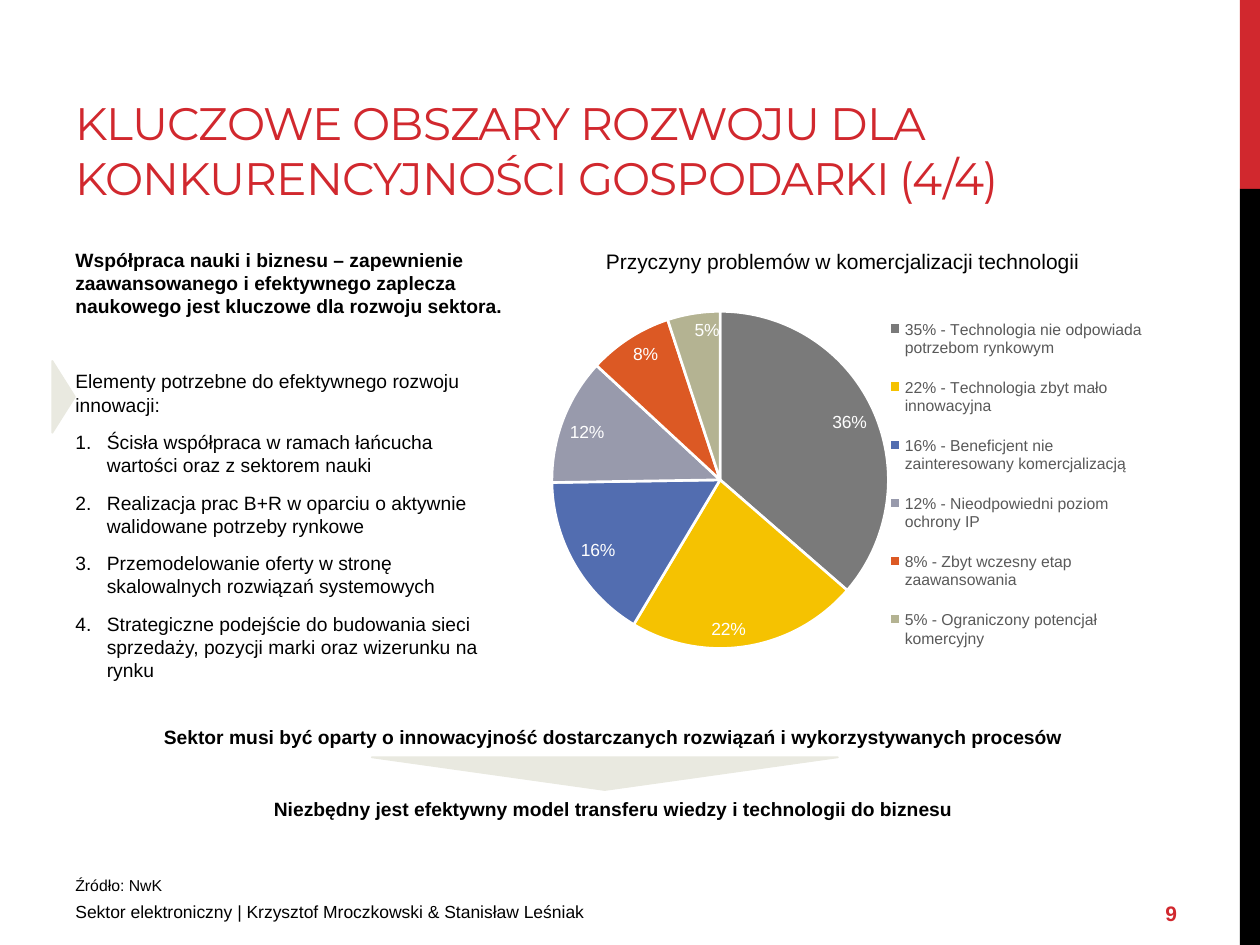
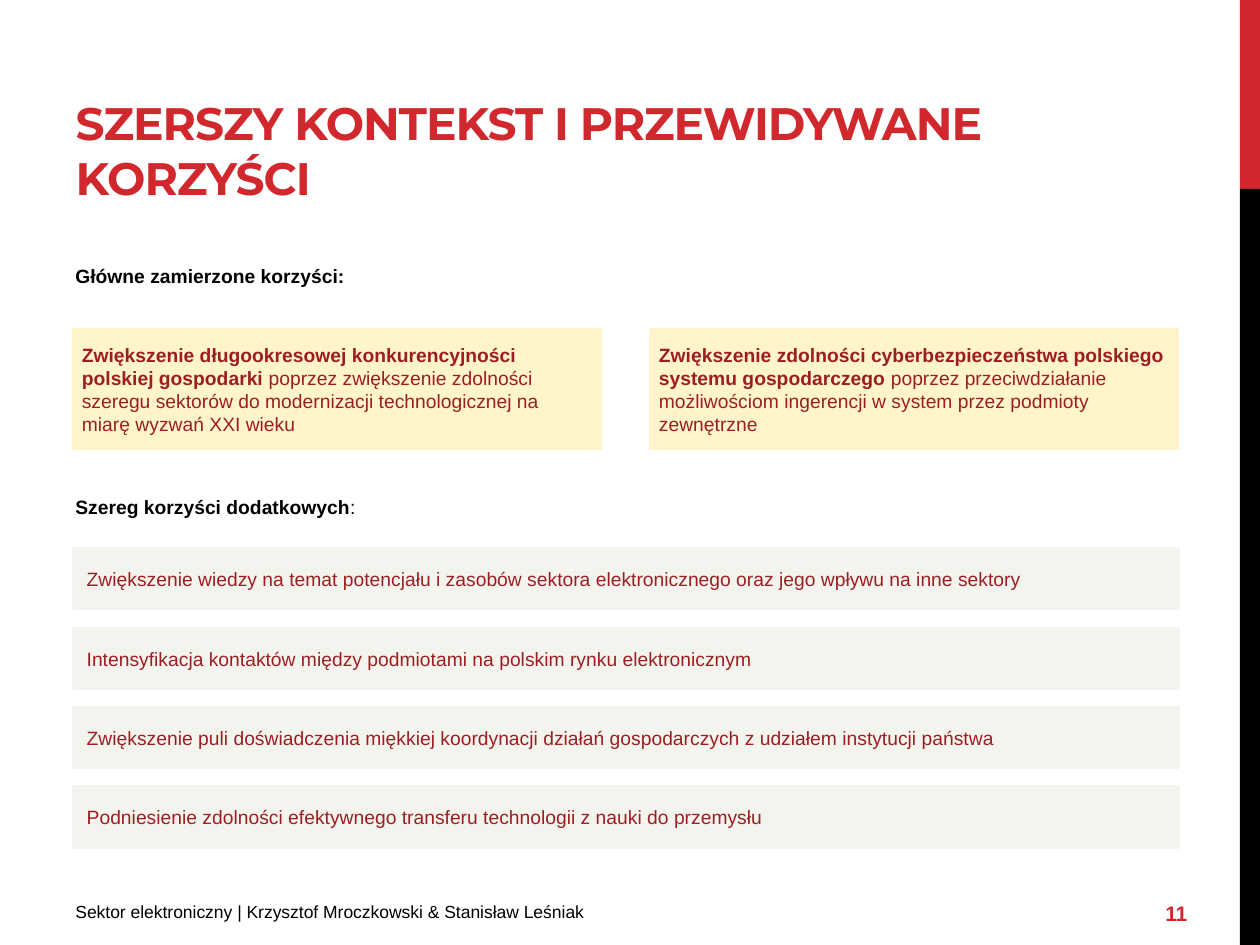
from lxml import etree
from pptx import Presentation
from pptx.chart.data import CategoryChartData
from pptx.dml.color import RGBColor
from pptx.enum.chart import XL_CHART_TYPE as ChartType
from pptx.enum.chart import XL_LABEL_POSITION as LabelPosition
from pptx.enum.chart import XL_LEGEND_POSITION as LegendPosition
from pptx.enum.shapes import MSO_SHAPE as Preset
from pptx.enum.text import MSO_ANCHOR as Anchor
from pptx.enum.text import MSO_AUTO_SIZE as AutoSize
from pptx.enum.text import PP_ALIGN as Align
from pptx.oxml.ns import qn
from pptx.util import Inches, Pt

RED = RGBColor(0xD1, 0x28, 0x2E)
DARK_RED = RGBColor(0x9D, 0x1E, 0x22)
BLACK = RGBColor(0, 0, 0)
WHITE = RGBColor(0xFF, 0xFF, 0xFF)
LEGEND_GREY = RGBColor(0x59, 0x59, 0x59)
ARROW_GREY = RGBColor(0xE9, 0xE9, 0xE0)
CARD_YELLOW = RGBColor(0xFF, 0xF4, 0xCA)
BAR_GREY = RGBColor(0xF4, 0xF4, 0xEF)

BODY = {"name": "Arial", "size": Pt(11), "bold": False}
BOLD = {**BODY, "bold": True}
TITLE = {"name": "Montserrat", "size": Pt(26), "bold": False}
FOOTER = {**BODY, "size": Pt(10)}
PAGE = {**BOLD, "size": Pt(12)}
CHART_TITLE = {**BODY, "size": Pt(12)}
SMALL = {**BODY, "size": Pt(9)}

FOOTER_TEXT = "Sektor elektroniczny | Krzysztof Mroczkowski & Stanisław Leśniak"
SIDE_BANDS = [(0, 1.5, RED), (1.5, 6, BLACK)]

AREAS_TITLE = "KLUCZOWE OBSZARY ROZWOJU DLA KONKURENCYJNOŚCI GOSPODARKI (4/4)"
COOPERATION = (
    "Współpraca nauki i biznesu – zapewnienie zaawansowanego i efektywnego "
    "zaplecza naukowego jest kluczowe dla rozwoju sektora."
)
ELEMENTS_INTRO = "Elementy potrzebne do efektywnego rozwoju innowacji:"
ELEMENTS = [
    "Ścisła współpraca w ramach łańcucha wartości oraz z sektorem nauki",
    "Realizacja prac B+R w oparciu o aktywnie walidowane potrzeby rynkowe",
    "Przemodelowanie oferty w stronę skalowalnych rozwiązań systemowych",
    "Strategiczne podejście do budowania sieci sprzedaży, pozycji marki oraz wizerunku na rynku",
]
CONCLUSIONS = [
    (5.71, "Sektor musi być oparty o innowacyjność dostarczanych rozwiązań i wykorzystywanych procesów"),
    (6.28, "Niezbędny jest efektywny model transferu wiedzy i technologii do biznesu"),
]
ARROWS = [(0.22, 3.06, 0.57, 0.18, 90), (2.95, 6.01, 3.7, 0.26, 180)]
PROBLEMS_TITLE = "Przyczyny problemów w komercjalizacji technologii"
PROBLEMS = [
    ("35% - Technologia nie odpowiada potrzebom rynkowym", 36, RGBColor(0x7A, 0x7A, 0x7A)),
    ("22% - Technologia zbyt mało innowacyjna", 22, RGBColor(0xF5, 0xC2, 0x01)),
    ("16% - Beneficjent nie zainteresowany komercjalizacją", 16, RGBColor(0x52, 0x6D, 0xB0)),
    ("12% - Nieodpowiedni poziom ochrony IP", 12, RGBColor(0x98, 0x9A, 0xAC)),
    ("8% - Zbyt wczesny etap zaawansowania", 8, RGBColor(0xDC, 0x59, 0x24)),
    ("5% - Ograniczony potencjał komercyjny", 5, RGBColor(0xB4, 0xB3, 0x92)),
]
SOURCE = "Źródło: NwK"

BENEFITS_TITLE = "SZERSZY KONTEKST I PRZEWIDYWANE KORZYŚCI"
HEADINGS = [
    (2.05, "Główne zamierzone korzyści", True),
    (3.88, "Szereg korzyści dodatkowych", False),
]
MAIN_BENEFITS = [
    ("Zwiększenie długookresowej konkurencyjności polskiej gospodarki ",
     "poprzez zwiększenie zdolności szeregu sektorów do modernizacji "
     "technologicznej na miarę wyzwań XXI wieku"),
    ("Zwiększenie zdolności cyberbezpieczeństwa polskiego systemu gospodarczego ",
     "poprzez przeciwdziałanie możliwościom ingerencji w system przez podmioty zewnętrzne"),
]
EXTRA_BENEFITS = [
    "Zwiększenie wiedzy na temat potencjału i zasobów sektora elektronicznego oraz jego wpływu na inne sektory",
    "Intensyfikacja kontaktów między podmiotami na polskim rynku elektronicznym",
    "Zwiększenie puli doświadczenia miękkiej koordynacji działań gospodarczych z udziałem instytucji państwa",
    "Podniesienie zdolności efektywnego transferu technologii z nauki do przemysłu",
]


def style_font(font, style, color):
    for attribute, value in style.items():
        setattr(font, attribute, value)
    font.color.rgb = color


def write(paragraph, runs, color=BLACK, align=Align.LEFT):
    paragraph.alignment = align
    for words, style in runs:
        run = paragraph.add_run()
        run.text = words
        style_font(run.font, style, color)


def add_text(slide, box, runs, color=BLACK, align=Align.LEFT, anchor=Anchor.TOP):
    frame = slide.shapes.add_textbox(*map(Inches, box)).text_frame
    frame.word_wrap = True
    frame.vertical_anchor = anchor
    write(frame.paragraphs[0], runs, color, align)
    return frame


def add_block(slide, box, color, border=0, preset=Preset.RECTANGLE):
    block = slide.shapes.add_shape(preset, *map(Inches, box))
    block.shadow.inherit = False
    block.fill.solid()
    block.fill.fore_color.rgb = color
    if border:
        block.line.color.rgb = color
        block.line.width = Pt(border)
    else:
        block.line.fill.background()
    return block


def add_panel(slide, box, color, runs, margin):
    panel = add_block(slide, box, color, 2.25)
    frame = panel.text_frame
    frame.word_wrap = True
    frame.vertical_anchor = Anchor.MIDDLE
    frame.margin_left = frame.margin_right = Inches(margin)
    write(frame.paragraphs[0], runs, DARK_RED)


def add_base(deck, heading, page, bold=False):
    slide = deck.slides.add_slide(deck.slide_layouts[5])
    for top, height, color in SIDE_BANDS:
        add_block(slide, (9.84, top, 0.16, height), color)
    title = slide.shapes.title
    title.left, title.top, title.width, title.height = map(Inches, (0.5, 0.17, 8.99, 1.5))
    frame = title.text_frame
    frame.auto_size = AutoSize.NONE
    frame.vertical_anchor = Anchor.BOTTOM
    write(frame.paragraphs[0], [(heading, {**TITLE, "bold": bold})], RED)
    frame.paragraphs[0].runs[0].font._element.set("spc", "-60")
    add_text(slide, (0.5, 7.1, 4.89, 0.31), [(FOOTER_TEXT, FOOTER)])
    add_text(slide, (9.15, 7.05, 1.44, 0.4), [(page, PAGE)], RED, anchor=Anchor.MIDDLE)
    return slide


def make_layout(x, y, w, h, inner=False):
    layout = etree.Element(qn("c:layout"))
    manual = etree.SubElement(layout, qn("c:manualLayout"))
    values = {"layoutTarget": "inner"} if inner else {}
    values |= {"xMode": "edge", "yMode": "edge", "x": x, "y": y, "w": w, "h": h}
    for tag, value in values.items():
        etree.SubElement(manual, qn(f"c:{tag}")).set("val", str(value))
    return layout


def add_problem_chart(slide):
    data = CategoryChartData()
    data.categories = [cause for cause, _, _ in PROBLEMS]
    data.add_series("Series 1", [share for _, share, _ in PROBLEMS])
    box = map(Inches, (4.37, 1.88, 4.78, 3.54))
    chart = slide.shapes.add_chart(ChartType.PIE, *box, data).chart
    style_font(chart.font, FOOTER, BLACK)
    chart.has_title = False
    chart.has_legend = True
    legend = chart.legend
    legend.position = LegendPosition.TOP
    legend.include_in_layout = False
    style_font(legend.font, SMALL, LEGEND_GREY)

    plot = chart.plots[0]
    plot.vary_by_categories = True
    plot.has_data_labels = True
    labels = plot.data_labels
    label_format = {
        "show_percentage": True, "show_value": False, "number_format": "0%",
        "number_format_is_linked": False, "position": LabelPosition.INSIDE_END,
    }
    for attribute, value in label_format.items():
        setattr(labels, attribute, value)
    style_font(labels.font, FOOTER, WHITE)
    for index, (_, _, color) in enumerate(PROBLEMS):
        slice_format = plot.series[0].points[index].format
        slice_format.fill.solid()
        slice_format.fill.fore_color.rgb = color
        slice_format.line.color.rgb = WHITE
        slice_format.line.width = Pt(1.5)

    plot_area = chart._chartSpace.chart.plotArea
    for holder in (plot_area, legend._element):
        for layout in holder.findall(qn("c:layout")):
            holder.remove(layout)
    plot_area.insert(0, make_layout(0, 0.13, 0.56, 0.83, inner=True))
    legend._element.find(qn("c:legendPos")).addnext(make_layout(0.58, 0.14, 0.42, 0.83))


def build_areas(deck):
    slide = add_base(deck, AREAS_TITLE, "9")
    frame = add_text(slide, (0.5, 1.92, 3.63, 4.78), [(COOPERATION, BOLD)])
    frame.paragraphs[0].space_after = Pt(6)
    for index, words in enumerate([ELEMENTS_INTRO, *ELEMENTS]):
        paragraph = frame.add_paragraph()
        write(paragraph, [(words, BODY)])
        paragraph.space_before = Pt(2.2 if index else 23.8)
        paragraph.space_after = Pt(6)
        if index:
            properties = paragraph._p.get_or_add_pPr()
            properties.set("marL", str(Inches(0.25)))
            properties.set("indent", str(-Inches(0.25)))
            etree.SubElement(properties, qn("a:buFont")).set("typeface", "+mj-lt")
            etree.SubElement(properties, qn("a:buAutoNum")).set("type", "arabicPeriod")
    for *box, angle in ARROWS:
        add_block(slide, box, ARROW_GREY, 1, Preset.ISOSCELES_TRIANGLE).rotation = angle
    for top, words in CONCLUSIONS:
        add_text(slide, (0.59, top, 8.56, 0.29), [(words, BOLD)], align=Align.CENTER)
    add_problem_chart(slide)
    add_text(slide, (4.71, 1.92, 4.09, 0.3), [(PROBLEMS_TITLE, CHART_TITLE)])
    add_text(slide, (0.5, 6.9, 4.11, 0.25), [(SOURCE, SMALL)])


def build_benefits(deck):
    slide = add_base(deck, BENEFITS_TITLE, "11", bold=True)
    for top, words, bold_colon in HEADINGS:
        runs = [(words, BOLD), (":", BOLD if bold_colon else BODY)]
        add_text(slide, (0.5, top, 4.26, 0.42), runs)
    for column, (benefit, means) in enumerate(MAIN_BENEFITS):
        box = (0.59 + column * 4.58, 2.62, 4.17, 0.94)
        add_panel(slide, box, CARD_YELLOW, [(benefit, BOLD), (means, BODY)], 0.06)
    for row, benefit in enumerate(EXTRA_BENEFITS):
        box = (0.59, 4.36 + row * 0.63, 8.76, 0.47)
        add_panel(slide, box, BAR_GREY, [(benefit, BODY)], 0.1)


def main():
    deck = Presentation()
    deck.slide_width, deck.slide_height = Inches(10), Inches(7.5)
    build_areas(deck)
    build_benefits(deck)
    deck.save("out.pptx")


if __name__ == "__main__":
    main()
